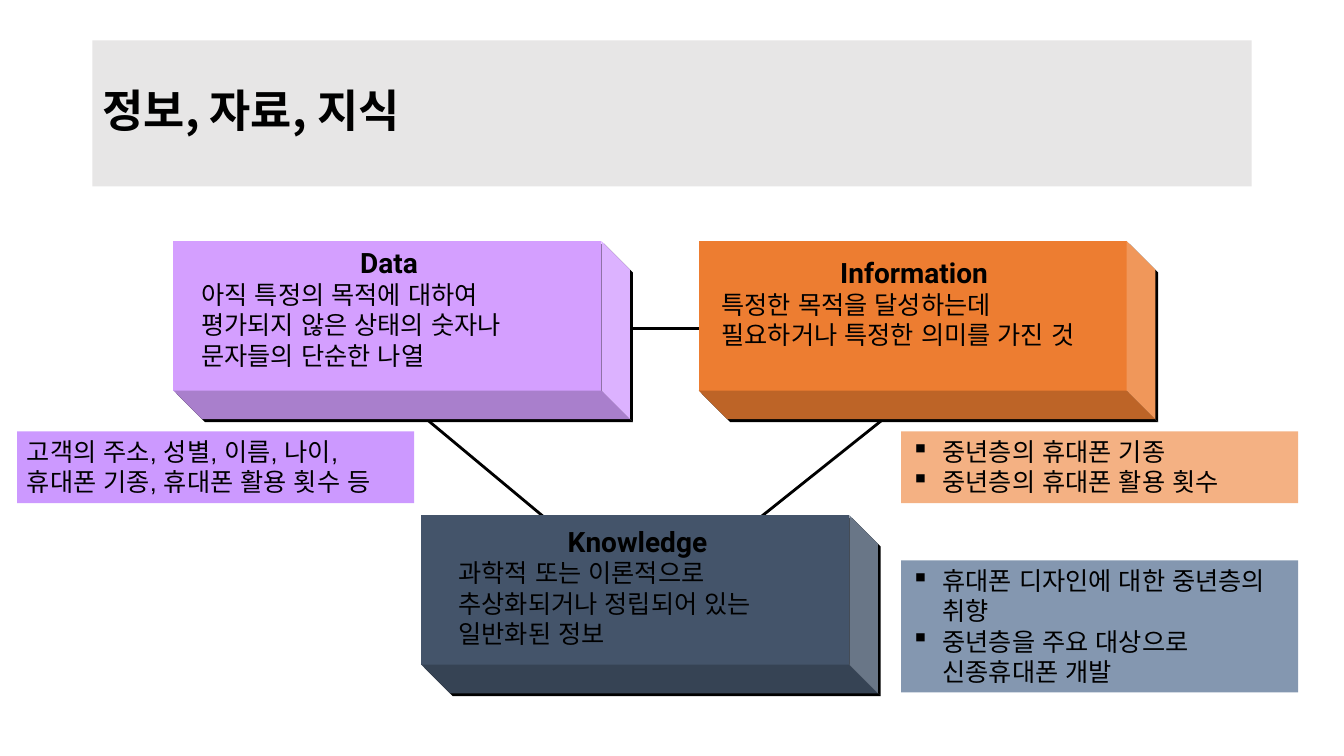
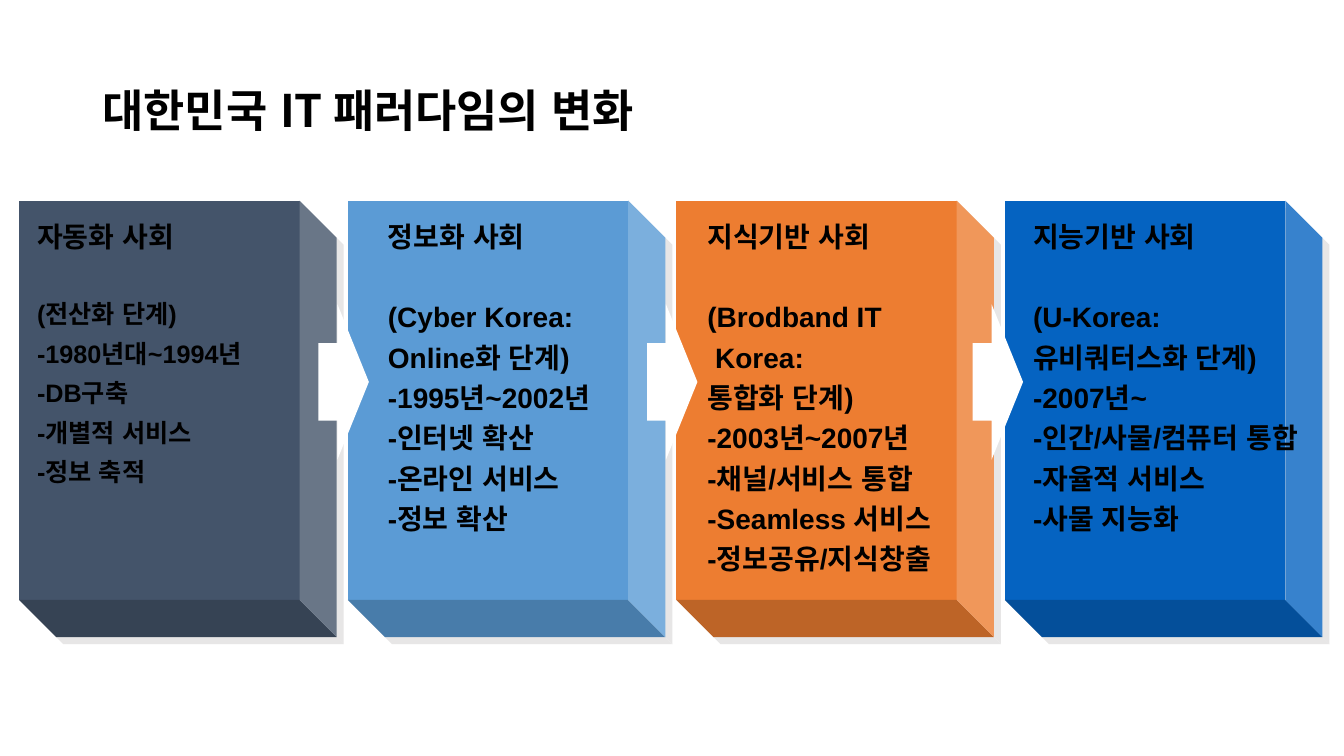
from lxml import etree
from pptx import Presentation
from pptx.dml.color import RGBColor
from pptx.enum.lang import MSO_LANGUAGE_ID
from pptx.enum.shapes import MSO_CONNECTOR, MSO_SHAPE
from pptx.enum.text import MSO_ANCHOR, MSO_AUTO_SIZE, PP_ALIGN
from pptx.oxml.ns import qn
from pptx.util import Pt

CUBE, RECTANGLE, ARROW = MSO_SHAPE.CUBE, MSO_SHAPE.RECTANGLE, MSO_SHAPE.RIGHT_ARROW
STRAIGHT = MSO_CONNECTOR.STRAIGHT
LEFT, CENTER = PP_ALIGN.LEFT, PP_ALIGN.CENTER
TOP, MIDDLE = MSO_ANCHOR.TOP, MSO_ANCHOR.MIDDLE
NO_FIT = MSO_AUTO_SIZE.NONE
KOREAN = MSO_LANGUAGE_ID.KOREAN

KOREAN_FONT, LATIN_FONT, HEADING_FONT = "Noto Sans CJK KR", "Arial", "Roboto"
BLACK, WHITE, GRAY = "000000", "FFFFFF", "E7E6E6"
SLATE, ORANGE = "44546A", "ED7D31"
TITLE_BOX = (66, 28.8, 828, 104.4)
LINE_HEIGHT = 1.2
INDENT = 22.5

CONCEPT_SIZE = (326.2, 127.4)
CONCEPTS = [
    ((123.8, 172.1), "D49FFF", (136.8, 172.1, 282.2, 97.2), "Data", KOREAN_FONT,
     "아직 특정의 목적에 대하여 평가되지 않은 상태의 숫자나 문자들의 단순한 나열"),
    ((499, 172.1), ORANGE, (508.3, 179.3, 289.4, 74.9), "Information", KOREAN_FONT,
     "특정한 목적을 달성하는데 필요하거나 특정한 의미를 가진 것"),
    ((300.9, 367.9), SLATE, (320.4, 370.8, 270, 97.2), "Knowledge", "Times New Roman",
     "과학적 또는 이론적으로 추상화되거나 정립되어 있는 일반화된 정보"),
]
CONCEPT_LINKS = [
    ((354.2, 234.7), (588.2, 234.7)),
    ((687.6, 254.2), (519.8, 388.1)),
    ((411.1, 388.1), (264.2, 265.7)),
]
EXAMPLES = [
    ((12.2, 308.2, 283.7, 51.1), "CC99FF", None,
     ["고객의 주소, 성별, 이름, 나이, 휴대폰 기종, 휴대폰 활용 횟수 등"]),
    ((643.7, 308.2, 283.7, 51.1), "F4B183", "▪",
     ["중년층의 휴대폰 기종", "중년층의 휴대폰 활용 횟수"]),
    ((643.7, 400.3, 283.7, 94.3), "8497B0", "▪",
     ["휴대폰 디자인에 대한 중년층의 취향", "중년층을 주요 대상으로 신종휴대폰 개발"]),
]

STAGE_LEFT, STAGE_TOP, STAGE_STEP = 13.7, 143.3, 234.7
STAGE_SIZE = (226.8, 311.8)
STAGES = [
    (SLATE, (19.4, 185), 227.5, 18, "자동화 사회",
     ["(전산화 단계)", "-1980년대~1994년", "-DB구축", "-개별적 서비스", "-정보 축적"]),
    ("5B9BD5", (270, 180), 462.2, 20, "정보화 사회",
     ["(Cyber Korea:", "Online화 단계)", "-1995년~2002년", "-인터넷 확산",
      "-온라인 서비스", "-정보 확산"]),
    (ORANGE, (498.2, 197.3), 694.8, 20, "지식기반 사회",
     ["(Brodband IT", " Korea:", "통합화 단계)", "-2003년~2007년",
      "-채널/서비스 통합", "-Seamless 서비스", "-정보공유/지식창출"]),
    ("0563C1", (730.8, 205.2), None, 20, "지능기반 사회",
     ["(U-Korea:", "유비쿼터스화 단계)", "-2007년~", "-인간/사물/컴퓨터 통합",
      "-자율적 서비스", "-사물 지능화"]),
]


def color(hex_string):
    """Turn a hex string into a colour."""
    return RGBColor.from_string(hex_string)


def points(values):
    """Turn numbers into lengths in points."""
    return [Pt(value) for value in values]


def write(paragraph, text, size=18, font=LATIN_FONT, bold=False, align=LEFT,
          spacing=None, after=0, bullet=None):
    """Put formatted text into a paragraph."""
    run = paragraph.add_run()
    run.text = text
    run.font.size = Pt(size)
    run.font.name = font
    run.font.bold = bold
    run.font.color.rgb = color(BLACK)
    run.font.language_id = KOREAN
    properties = run._r.get_or_add_rPr()
    latin = properties.find(qn("a:latin"))
    east_asian = etree.Element(qn("a:ea"), typeface=KOREAN_FONT)
    latin.addnext(east_asian)
    paragraph.alignment = align
    paragraph.line_spacing = spacing
    paragraph.space_before = Pt(0)
    paragraph.space_after = Pt(after)
    if bullet:
        format_element = paragraph._p.get_or_add_pPr()
        format_element.set("marL", str(Pt(INDENT)))
        format_element.set("indent", str(-Pt(INDENT)))
        etree.SubElement(format_element, qn("a:buChar"), char=bullet)


def prepare_frame(shape, anchor=TOP):
    """Make a shape's text wrap in a fixed box."""
    frame = shape.text_frame
    frame.word_wrap = True
    frame.auto_size = NO_FIT
    frame.vertical_anchor = anchor
    return frame


def next_paragraph(frame):
    """Return the first empty paragraph or a new one."""
    first = frame.paragraphs[0]
    return frame.add_paragraph() if first.runs else first


def add_solid(shapes, kind, box, fill):
    """Add a filled shape without an outline or shadow."""
    shape = shapes.add_shape(kind, *points(box))
    shape.fill.solid()
    shape.fill.fore_color.rgb = color(fill)
    shape.line.fill.background()
    shape.shadow.inherit = False
    return shape


def add_cube(shapes, box, fill, depth, shadow_color, shadow_distance):
    """Add a turned cube that appears within the box."""
    left, top, width, height = box
    shift = (width - height) / 2
    cube = add_solid(shapes, CUBE, (left + shift, top - shift, height, width), fill)
    cube.rotation = 90
    cube.adjustments[0] = depth
    effects = cube._element.spPr.find(qn("a:effectLst"))
    shadow = etree.SubElement(effects, qn("a:outerShdw"), dist=str(Pt(shadow_distance)),
                              dir="2700000", algn="ctr", rotWithShape="0")
    etree.SubElement(shadow, qn("a:srgbClr"), val=shadow_color)


def add_link(shapes, start, end):
    """Add a black line with a stealth arrowhead."""
    link = shapes.add_connector(STRAIGHT, *points(start + end))
    link.line.color.rgb = color(BLACK)
    link.line.width = Pt(2)
    etree.SubElement(link.line._get_or_add_ln(), qn("a:tailEnd"), type="stealth")
    etree.SubElement(link._element.spPr, qn("a:effectLst"))


def add_titled_slide(presentation, text, fill=None):
    """Add a slide with the shared title style."""
    slide = presentation.slides.add_slide(presentation.slide_layouts[5])
    title = slide.shapes.title
    title.left, title.top, title.width, title.height = points(TITLE_BOX)
    if fill:
        title.fill.solid()
        title.fill.fore_color.rgb = color(fill)
    frame = prepare_frame(title, MIDDLE)
    write(frame.paragraphs[0], text, size=32, font=KOREAN_FONT, bold=True, spacing=0.9)
    return slide


def add_concept(slide, position, fill, text_box, heading, font, body):
    """Add a grouped cube with a heading and a definition."""
    shapes = slide.shapes.add_group_shape().shapes
    add_cube(shapes, position + CONCEPT_SIZE, fill, 0.161, BLACK, 2.8)
    frame = prepare_frame(shapes.add_textbox(*points(text_box)))
    write(next_paragraph(frame), heading, size=20, font=HEADING_FONT, bold=True, align=CENTER)
    write(next_paragraph(frame), body, font=font, spacing=Pt(18 * LINE_HEIGHT))


def add_example(slide, box, fill, bullet, lines):
    """Add a coloured box of examples."""
    frame = prepare_frame(add_solid(slide.shapes, RECTANGLE, box, fill))
    for line in lines:
        write(next_paragraph(frame), line, spacing=Pt(18 * LINE_HEIGHT), bullet=bullet)


def add_stage_text(slide, left, width, size, heading, lines):
    """Add the heading and points of one stage."""
    box = (left, STAGE_TOP + 5, width, 270)
    frame = prepare_frame(slide.shapes.add_textbox(*points(box)))
    pitch = Pt(28.8 if size == 20 else 28.2)
    write(next_paragraph(frame), heading, size=20, bold=True, spacing=Pt(28.8),
          after=size * LINE_HEIGHT * 1.2)
    for line in lines:
        write(next_paragraph(frame), line, size=size, bold=True, spacing=pitch)


def add_stage_arrow(slide, left):
    """Add a white arrow between two stages."""
    arrow = add_solid(slide.shapes, ARROW, (left, STAGE_TOP + 74.1, 36, 110.9), WHITE)
    arrow.adjustments[0] = 0.5
    arrow.adjustments[1] = 0.623


def build_concepts(presentation):
    """Build the slide on data, information and knowledge."""
    slide = add_titled_slide(presentation, "정보, 자료, 지식", GRAY)
    for start, end in CONCEPT_LINKS:
        add_link(slide.shapes, start, end)
    for concept in CONCEPTS:
        add_concept(slide, *concept)
    for example in EXAMPLES:
        add_example(slide, *example)


def build_stages(presentation):
    """Build the slide on the four stages of society."""
    slide = add_titled_slide(presentation, "대한민국 IT 패러다임의 변화")
    for index, stage in enumerate(STAGES):
        position = (STAGE_LEFT + index * STAGE_STEP, STAGE_TOP)
        add_cube(slide.shapes, position + STAGE_SIZE, stage[0], 0.117, GRAY, 7.1)
    for _, (left, width), arrow_left, size, heading, lines in STAGES:
        if arrow_left:
            add_stage_arrow(slide, arrow_left)
        add_stage_text(slide, left, width, size, heading, lines)


def main():
    """Build and save the presentation."""
    presentation = Presentation()
    presentation.slide_width, presentation.slide_height = Pt(960), Pt(540)
    build_concepts(presentation)
    build_stages(presentation)
    presentation.save("out.pptx")


if __name__ == "__main__":
    main()
